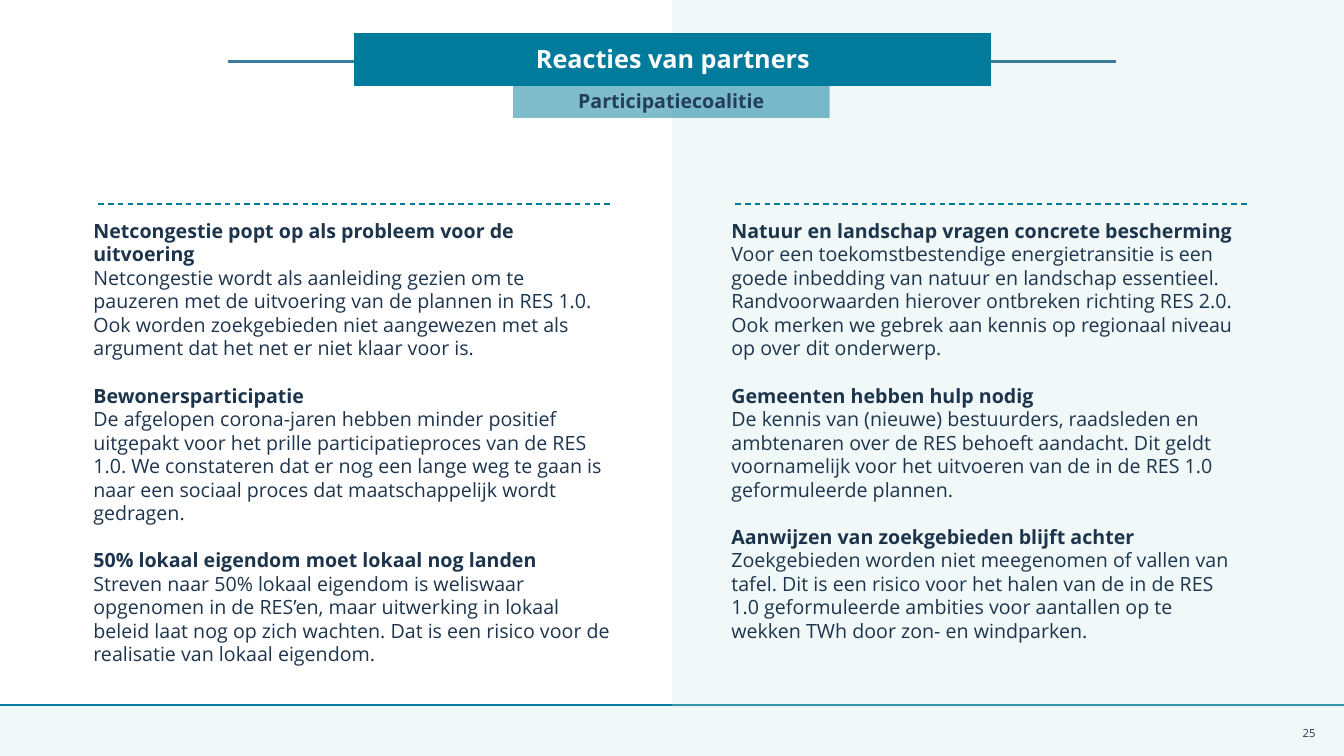
from dataclasses import dataclass
from typing import Optional

from lxml import etree
from pptx import Presentation
from pptx import util as u
from pptx.dml.color import RGBColor
from pptx.enum import dml, shapes, text
from pptx.oxml import ns

WIDTH, HEIGHT = u.Inches(13.33), u.Inches(7.5)
FONT = "Open Sans"
COLORS = {
    "teal": "007B9B", "steel": "387B9A", "footer": "E4F3F3", "panel": "C8E5E6",
    "ink": "1D344D", "navy": "233D5A", "white": "FFFFFF",
}


@dataclass
class Box:
    """A rectangle in percentages of the slide's width and height."""
    left: float
    top: float
    width: float
    height: float

    def emu(self) -> tuple[int, int, int, int]:
        """Return the rectangle in slide units."""
        return (share_x(self.left), share_y(self.top),
                share_x(self.width), share_y(self.height))


@dataclass
class Rule:
    """A horizontal line in percentages of the slide."""
    start: float
    end: float
    y: float
    color: str
    weight: float = 1
    dashed: bool = False


@dataclass
class Label:
    """A single line of text with its look and frame settings."""
    words: str
    size: float
    color: str
    bold: bool = True
    align: text.PP_ALIGN = text.PP_ALIGN.CENTER
    spacing: float = 1.0
    insets: tuple[float, float, float, float] = (0, 0, 0, 0)


@dataclass
class Panel:
    """A filled rectangle, optionally translucent, outlined or labelled."""
    box: Box
    color: str
    alpha: int = 100
    outlined: bool = False
    label: Optional[Label] = None


@dataclass
class Column:
    """A column of headed reactions."""
    box: Box
    reactions: list[tuple[str, str]]


BACKDROP = [
    Panel(Box(0, 93.25, 100, 6.75), "footer", 50),
    Rule(0, 100, 93.25, "teal"),
    Panel(Box(50, 0, 50, 93.6), "panel", 25),
    Rule(17, 83.05, 8.13, "steel", 2.25),
    Rule(7.32, 45.57, 26.98, "teal", dashed=True),
    Rule(54.72, 92.9, 26.98, "teal", dashed=True),
]
HEADINGS = [
    Panel(Box(26.4, 4.4, 47.33, 6.93), "teal", outlined=True,
          label=Label("Reacties van partners", 18, "white", spacing=0.9,
                      insets=(0, 0.02, 0, 0))),
    Panel(Box(38.18, 11.15, 23.55, 4.45), "teal", 50,
          label=Label("Participatiecoalitie", 14, "navy",
                      insets=(0.1, 0.05, 0.1, 0.05))),
]
PAGE_BOX = Box(94.28, 94.27, 3.6, 5.33)
PAGE = Label("25", 8, "ink", bold=False, align=text.PP_ALIGN.RIGHT)
COLUMNS = [
    Column(Box(6.95, 28.93, 38.78, 65.33), [
        ("Netcongestie popt op als probleem voor de uitvoering",
         "Netcongestie wordt als aanleiding gezien om te pauzeren met de uitvoering "
         "van de plannen in RES 1.0. Ook worden zoekgebieden niet aangewezen met als "
         "argument dat het net er niet klaar voor is."),
        ("Bewonersparticipatie",
         "De afgelopen corona-jaren hebben minder positief uitgepakt voor het prille "
         "participatieproces van de RES 1.0. We constateren dat er nog een lange weg "
         "te gaan is naar een sociaal proces dat maatschappelijk wordt gedragen."),
        ("50% lokaal eigendom moet lokaal nog landen",
         "Streven naar 50% lokaal eigendom is weliswaar opgenomen in de RES’en, maar "
         "uitwerking in lokaal beleid laat nog op zich wachten. Dat is een risico "
         "voor de realisatie van lokaal eigendom."),
    ]),
    Column(Box(54.42, 28.93, 38.1, 55.6), [
        ("Natuur en landschap vragen concrete bescherming",
         "Voor een toekomstbestendige energietransitie is een goede inbedding van "
         "natuur en landschap essentieel. Randvoorwaarden hierover ontbreken richting "
         "RES 2.0. Ook merken we gebrek aan kennis op regionaal niveau op over dit "
         "onderwerp."),
        ("Gemeenten hebben hulp nodig",
         "De kennis van (nieuwe) bestuurders, raadsleden en ambtenaren over de RES "
         "behoeft aandacht. Dit geldt voornamelijk voor het uitvoeren van de in de "
         "RES 1.0 geformuleerde plannen."),
        ("Aanwijzen van zoekgebieden blijft achter",
         "Zoekgebieden worden niet meegenomen of vallen van tafel. Dit is een risico "
         "voor het halen van de in de RES 1.0 geformuleerde ambities voor aantallen "
         "op te wekken TWh door zon- en windparken."),
    ]),
]


def share_x(percent: float) -> int:
    """Convert a share of the slide's width to slide units."""
    return round(WIDTH * percent / 100)


def share_y(percent: float) -> int:
    """Convert a share of the slide's height to slide units."""
    return round(HEIGHT * percent / 100)


def rgb(name: str) -> RGBColor:
    """Look up a palette colour."""
    return RGBColor.from_string(COLORS[name])


def set_insets(tf, insets: tuple[float, float, float, float]) -> None:
    """Wrap a text frame and set its left, top, right and bottom insets."""
    tf.word_wrap = True
    tf.margin_left, tf.margin_top, tf.margin_right, tf.margin_bottom = map(u.Inches, insets)


def style_runs(p, size: float, color: str, bold: bool) -> None:
    """Format every run of a paragraph."""
    for r in p.runs:
        r.font.name, r.font.size, r.font.bold = FONT, u.Pt(size), bold
        r.font.color.rgb = rgb(color)


def write_label(tf, label: Label) -> None:
    """Write one label into a text frame."""
    set_insets(tf, label.insets)
    tf.vertical_anchor = text.MSO_ANCHOR.MIDDLE
    tf.text = label.words
    p = tf.paragraphs[0]
    p.alignment, p.line_spacing = label.align, label.spacing
    style_runs(p, label.size, label.color, label.bold)


def draw_panel(s, panel: Panel) -> None:
    """Draw a filled rectangle and its label."""
    sp = s.shapes.add_shape(shapes.MSO_SHAPE.RECTANGLE, *panel.box.emu())
    sp.shadow.inherit = False
    sp.fill.solid()
    sp.fill.fore_color.rgb = rgb(panel.color)
    if panel.alpha < 100:
        clr = sp._element.spPr.find(".//" + ns.qn("a:srgbClr"))
        etree.SubElement(clr, ns.qn("a:alpha"), val=str(panel.alpha * 1000))
    if panel.outlined:
        sp.line.color.rgb = rgb(panel.color)
        sp.line.width = u.Pt(0.75)
    else:
        sp.line.fill.background()
    if panel.label:
        write_label(sp.text_frame, panel.label)


def draw_rule(s, rule: Rule) -> None:
    """Draw a horizontal line."""
    y = share_y(rule.y)
    sp = s.shapes.add_connector(shapes.MSO_CONNECTOR.STRAIGHT,
                                share_x(rule.start), y, share_x(rule.end), y)
    sp.line.color.rgb = rgb(rule.color)
    sp.line.width = u.Pt(rule.weight)
    if rule.dashed:
        sp.line.dash_style = dml.MSO_LINE.DASH
    etree.SubElement(sp._element.spPr, ns.qn("a:effectLst"))


def draw_column(s, column: Column) -> None:
    """Write a column of bold headings with their reactions."""
    tf = s.shapes.add_textbox(*column.box.emu()).text_frame
    set_insets(tf, (0, 0, 0, 0))
    tf.text = "\n".join(words for reaction in column.reactions for words in reaction)
    for i, p in enumerate(tf.paragraphs):
        heading = i % 2 == 0
        if heading and i:
            p.space_before = u.Pt(16.8)
        style_runs(p, 14, "ink", heading)


def main() -> None:
    """Build and save the slide."""
    prs = Presentation()
    prs.slide_width, prs.slide_height = WIDTH, HEIGHT
    s = prs.slides.add_slide(prs.slide_layouts[6])
    for item in BACKDROP + HEADINGS:
        if isinstance(item, Rule):
            draw_rule(s, item)
        else:
            draw_panel(s, item)
    write_label(s.shapes.add_textbox(*PAGE_BOX.emu()).text_frame, PAGE)
    for column in COLUMNS:
        draw_column(s, column)
    prs.save("out.pptx")


if __name__ == "__main__":
    main()
